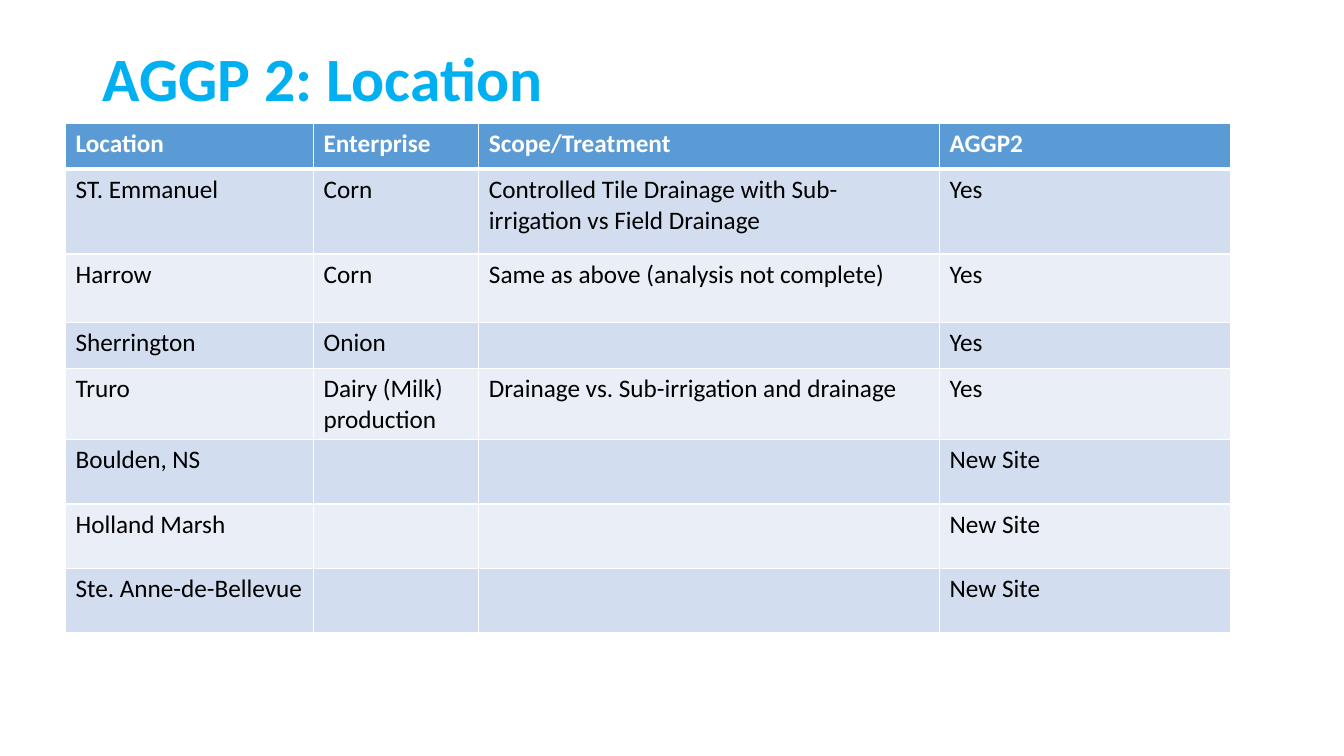
import pptx
import pptx.util
import pptx.dml.color
import pptx.enum.text
import pptx.oxml.ns
from lxml import etree

Inches, Pt = pptx.util.Inches, pptx.util.Pt
RGBColor = pptx.dml.color.RGBColor

SKY = RGBColor(0x00, 0xB0, 0xF0)
HEADER_BLUE = RGBColor(0x5B, 0x9B, 0xD5)
BAND_DARK = RGBColor(0xD2, 0xDE, 0xEF)
BAND_LIGHT = RGBColor(0xEA, 0xEF, 0xF7)
WHITE = RGBColor(0xFF, 0xFF, 0xFF)
BLACK = RGBColor(0x00, 0x00, 0x00)

COLUMN_WIDTHS = [2.46, 1.64, 4.57, 2.89]
ROW_HEIGHTS = [0.46, 0.84, 0.68, 0.46, 0.64, 0.64, 0.64, 0.64]
SITES = [
    ("Location", "Enterprise", "Scope/Treatment", "AGGP2"),
    ("ST. Emmanuel", "Corn",
     "Controlled Tile Drainage with Sub-irrigation vs Field Drainage", "Yes"),
    ("Harrow", "Corn", "Same as above (analysis not complete)", "Yes"),
    ("Sherrington", "Onion", "", "Yes"),
    ("Truro", "Dairy (Milk) production",
     "Drainage vs. Sub-irrigation and drainage", "Yes"),
    ("Boulden, NS", "", "", "New Site"),
    ("Holland Marsh", "", "", "New Site"),
    ("Ste. Anne-de-Bellevue", "", "", "New Site"),
]


def write(paragraph, text, color, **font_format):
    run = paragraph.add_run()
    run.text = text
    run.font.color.rgb = color
    for attribute, value in {"name": "Calibri", **font_format}.items():
        setattr(run.font, attribute, value)


def set_borders(cell, widths):
    """Draw white cell borders; widths maps L, R, T, B to points."""
    properties = cell._tc.get_or_add_tcPr()
    qn = pptx.oxml.ns.qn
    for side, width in widths.items():
        line = etree.SubElement(properties, qn(f"a:ln{side}"), w=str(Pt(width)))
        fill = etree.SubElement(line, qn("a:solidFill"))
        etree.SubElement(fill, qn("a:srgbClr"), val=str(WHITE))


def add_title(slide, left, top, width, height):
    frame = slide.shapes.add_textbox(left, top, width, height).text_frame
    frame_format = {
        "word_wrap": True,
        "vertical_anchor": pptx.enum.text.MSO_ANCHOR.MIDDLE,
    }
    for attribute, value in frame_format.items():
        setattr(frame, attribute, value)
    heading = frame.paragraphs[0]
    heading.line_spacing = 0.9
    write(heading, "AGGP 2: Location", SKY, size=Pt(44), bold=True)


def add_site_table(slide, left, top, width, height):
    sites = slide.shapes.add_table(
        len(SITES), len(COLUMN_WIDTHS), left, top, width, height).table
    for column, column_width in zip(sites.columns, COLUMN_WIDTHS):
        column.width = Inches(column_width)
    for row, row_height in zip(sites.rows, ROW_HEIGHTS):
        row.height = Inches(row_height)

    for r, site in enumerate(SITES):
        is_header = r == 0
        band = HEADER_BLUE if is_header else (BAND_LIGHT, BAND_DARK)[r % 2]
        # The rule under the header is thicker than the others
        borders = {"L": 1, "R": 1, "T": 3 if r == 1 else 1,
                   "B": 3 if is_header else 1}
        for c, text in enumerate(site):
            cell = sites.cell(r, c)
            set_borders(cell, borders)
            cell.fill.solid()
            cell.fill.fore_color.rgb = band
            if text:
                write(cell.text_frame.paragraphs[0], text,
                      WHITE if is_header else BLACK,
                      size=Pt(18), bold=is_header)


def main():
    deck = pptx.Presentation()
    deck.slide_width, deck.slide_height = Inches(13.33), Inches(7.5)
    slide = deck.slides.add_slide(deck.slide_layouts[6])

    # Title
    add_title(slide, Inches(0.92), Inches(0.4), Inches(11.5), Inches(0.82))
    # Locations and treatments
    add_site_table(slide, Inches(0.65), Inches(1.22),
                   Inches(sum(COLUMN_WIDTHS)), Inches(sum(ROW_HEIGHTS)))

    deck.save("out.pptx")


if __name__ == "__main__":
    main()
